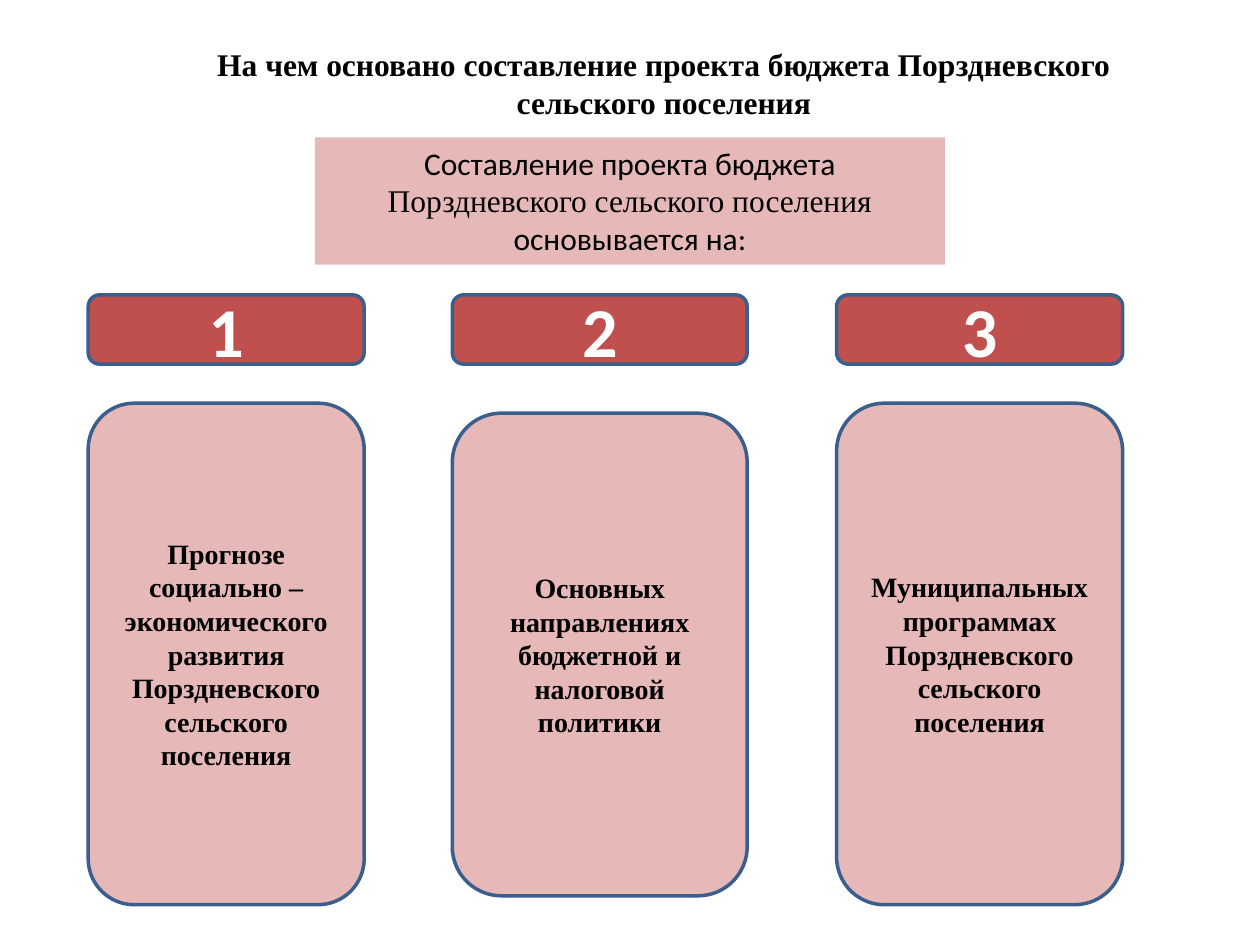
from dataclasses import dataclass

from pptx import Presentation
from pptx.dml.color import RGBColor
from pptx.enum.shapes import MSO_SHAPE
from pptx.enum.text import MSO_ANCHOR, MSO_AUTO_SIZE, PP_ALIGN
from pptx.util import Inches, Pt

RECTANGLE = MSO_SHAPE.RECTANGLE
ROUNDED = MSO_SHAPE.ROUNDED_RECTANGLE
TOP = MSO_ANCHOR.TOP
MIDDLE = MSO_ANCHOR.MIDDLE
CENTER = PP_ALIGN.CENTER
NO_AUTOFIT = MSO_AUTO_SIZE.NONE
TITLE_ONLY = 5


@dataclass(frozen=True)
class Theme:
    black: RGBColor = RGBColor(0x00, 0x00, 0x00)
    white: RGBColor = RGBColor(0xFF, 0xFF, 0xFF)
    pink: RGBColor = RGBColor(0xE6, 0xB9, 0xB8)
    red: RGBColor = RGBColor(0xC0, 0x50, 0x4D)
    outline: RGBColor = RGBColor(0x3A, 0x5F, 0x8C)
    serif: str = "Times New Roman"
    sans: str = "Calibri"
    heading_size: int = 18
    body_size: int = 16
    number_size: int = 40
    line_width: int = 2


class SlideBuilder:
    def __init__(self, slide, theme):
        self.slide = slide
        self.theme = theme

    def set_text(self, shape, runs, size, color, bold=False, anchor=MIDDLE):
        frame = shape.text_frame
        frame_format = {"word_wrap": True, "auto_size": NO_AUTOFIT, "vertical_anchor": anchor}
        for name, value in frame_format.items():
            setattr(frame, name, value)
        paragraph = frame.paragraphs[0]
        paragraph.alignment = CENTER
        for text, font_name in runs:
            run = paragraph.add_run()
            run.text = text
            run.font.color.rgb = color
            for name, value in {"name": font_name, "size": Pt(size), "bold": bold}.items():
                setattr(run.font, name, value)

    def title(self, text, left, top, width, height):
        shape = self.slide.shapes.title
        position = {"left": left, "top": top, "width": width, "height": height}
        for name, value in position.items():
            setattr(shape, name, Inches(value))
        theme = self.theme
        self.set_text(shape, [(text, theme.serif)], theme.heading_size, theme.black, True, TOP)

    def box(self, kind, left, top, width, height, fill, outlined=True):
        lengths = [Inches(value) for value in (left, top, width, height)]
        shape = self.slide.shapes.add_shape(kind, *lengths)
        shape.shadow.inherit = False
        shape.fill.solid()
        shape.fill.fore_color.rgb = fill
        if outlined:
            shape.line.color.rgb = self.theme.outline
            shape.line.width = Pt(self.theme.line_width)
        else:
            shape.line.fill.background()
        return shape

    def banner(self, runs, left, top, width, height):
        theme = self.theme
        shape = self.box(RECTANGLE, left, top, width, height, theme.pink, outlined=False)
        self.set_text(shape, runs, theme.heading_size, theme.black, anchor=TOP)

    def number(self, number, left, top, width, height):
        theme = self.theme
        shape = self.box(ROUNDED, left, top, width, height, theme.red)
        self.set_text(shape, [(str(number), theme.sans)], theme.number_size, theme.white, True)

    def card(self, text, left, top, width, height):
        theme = self.theme
        shape = self.box(ROUNDED, left, top, width, height, theme.pink)
        self.set_text(shape, [(text, theme.serif)], theme.body_size, theme.black, True)


def main():
    presentation = Presentation()
    presentation.slide_width = Inches(10)
    presentation.slide_height = Inches(7.5)
    slide = presentation.slides.add_slide(presentation.slide_layouts[TITLE_ONLY])
    theme = Theme()
    builder = SlideBuilder(slide, theme)

    builder.title(
        "На чем основано составление проекта бюджета Порздневского сельского поселения",
        1.09, 0.31, 8.36, 0.71,
    )
    builder.banner(
        [
            ("Составление проекта бюджета ", theme.sans),
            ("Порздневского сельского поселения ", theme.serif),
            ("основывается на:", theme.sans),
        ],
        2.5, 1.09, 5, 1.01,
    )

    columns = [
        (0.7, 2.19, 3.2, 3.98,
         "Прогнозе социально – экономического развития Порздневского сельского поселения"),
        (3.59, 2.34, 3.28, 3.83,
         "Основных направлениях бюджетной и налоговой политики"),
        (6.64, 2.27, 3.2, 3.98,
         "Муниципальных программах Порздневского сельского поселения"),
    ]
    for number, (left, width, card_top, card_height, text) in enumerate(columns, start=1):
        builder.number(number, left, 2.34, width, 0.55)
        builder.card(text, left, card_top, width, card_height)

    presentation.save("out.pptx")


if __name__ == "__main__":
    main()
